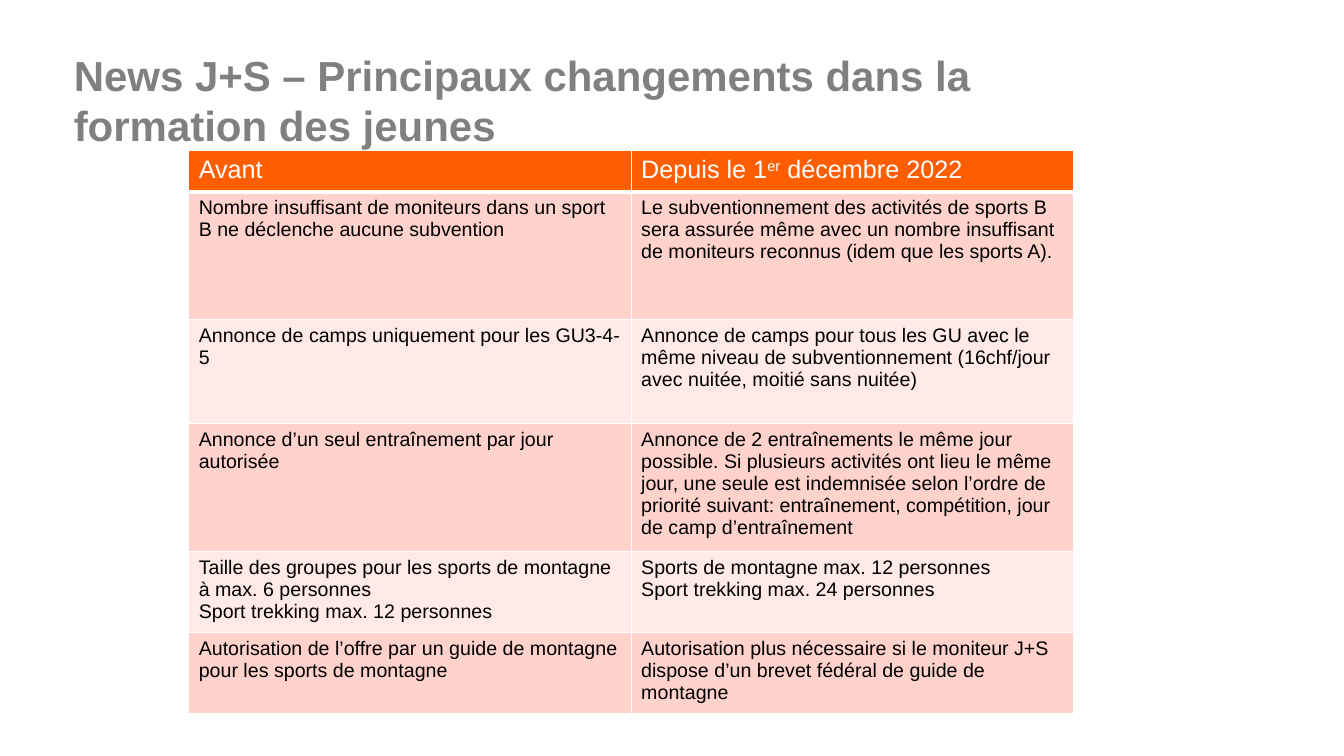
import pptx
import pptx.dml.color
import pptx.oxml.ns
import pptx.util
from lxml import etree

Cm, Pt = pptx.util.Cm, pptx.util.Pt
RGBColor = pptx.dml.color.RGBColor

# Content: each cell is a list of paragraphs, each paragraph a list of runs
TITLE = "News J+S – Principaux changements dans la formation des jeunes"
SUPERSCRIPT = "er"
HEADINGS = ([["Avant"]], [["Depuis le 1", SUPERSCRIPT, " décembre 2022"]])
CHANGES = [
    ([["Nombre insuffisant de moniteurs dans un sport B ne déclenche aucune subvention"]],
     [["Le subventionnement des activités de sports B sera assurée même avec un nombre "
       "insuffisant de moniteurs reconnus (idem que les sports A)."]]),
    ([["Annonce de camps uniquement pour les GU3-4-5"]],
     [["Annonce de camps pour tous les GU avec le même niveau de subventionnement "
       "(16chf/jour avec nuitée, moitié sans nuitée)"]]),
    ([["Annonce d’un seul entraînement par jour autorisée"]],
     [["Annonce de 2 entraînements le même jour possible. Si plusieurs activités ont lieu "
       "le même jour, une seule est indemnisée selon l’ordre de priorité suivant: "
       "entraînement, compétition, jour de camp d’entraînement"]]),
    ([["Taille des groupes pour les sports de montagne à max. 6 personnes"],
      ["Sport trekking max. 12 personnes"]],
     [["Sports de montagne max. 12 personnes"],
      ["Sport trekking max. 24 personnes"]]),
    ([["Autorisation de l’offre par un guide de montagne pour les sports de montagne"]],
     [["Autorisation plus nécessaire si le moniteur J+S dispose d’un brevet fédéral "
       "de guide de montagne"]]),
]

# Look
FONT = "Arial"
GREY = RGBColor(0x80, 0x80, 0x80)
WHITE = RGBColor(0xFF, 0xFF, 0xFF)
BLACK = RGBColor(0, 0, 0)
ORANGE = RGBColor(0xFF, 0x5E, 0x00)
BANDS = (RGBColor(0xFF, 0xD2, 0xCC), RGBColor(0xFF, 0xEA, 0xE7))
COLUMN_WIDTH = Cm(11.15)
ROW_HEIGHTS = [Cm(h) for h in (1.03, 3.23, 2.62, 3.03, 1.92, 2.03)]


def add_run(paragraph, text, size, color, bold=False):
    run = paragraph.add_run()
    run.text = text
    run.font.name = FONT
    run.font.size = Pt(size)
    run.font.bold = bold
    run.font.color.rgb = color
    return run


def add_borders(cell, top, bottom):
    properties = cell._tc.get_or_add_tcPr()
    qn = pptx.oxml.ns.qn
    for side, width in (("L", 1), ("R", 1), ("T", top), ("B", bottom)):
        line = etree.SubElement(properties, qn(f"a:ln{side}"), w=str(Pt(width)))
        fill = etree.SubElement(line, qn("a:solidFill"))
        etree.SubElement(fill, qn("a:srgbClr"), val=str(WHITE))


def fill_cell(cell, paragraphs, size, color, background):
    cell.fill.solid()
    cell.fill.fore_color.rgb = background
    cell.margin_left = cell.margin_right = Cm(0.25)
    cell.margin_top = cell.margin_bottom = Cm(0.13)
    frame = cell.text_frame
    for index, runs in enumerate(paragraphs):
        paragraph = frame.add_paragraph() if index else frame.paragraphs[0]
        for text in runs:
            run = add_run(paragraph, text, size, color)
            if text == SUPERSCRIPT:
                run._r.get_or_add_rPr().set("baseline", "30000")


deck = pptx.Presentation()
deck.slide_width, deck.slide_height = Cm(33.87), Cm(19.05)
slide = deck.slides.add_slide(deck.slide_layouts[6])

# Title
title = slide.shapes.add_textbox(Cm(1.86), Cm(1.25), Cm(26.1), Cm(1)).text_frame
title.word_wrap = True
title.margin_left = title.margin_right = title.margin_top = title.margin_bottom = 0
add_run(title.paragraphs[0], TITLE, 30, GREY, bold=True)

# Table of changes
rows = [HEADINGS] + CHANGES
changes = slide.shapes.add_table(len(rows), len(HEADINGS), Cm(4.76), Cm(3.8),
                                 COLUMN_WIDTH * len(HEADINGS), sum(ROW_HEIGHTS)).table
for column in changes.columns:
    column.width = COLUMN_WIDTH
for r, (row, height) in enumerate(zip(rows, ROW_HEIGHTS)):
    changes.rows[r].height = height
    look = (18, WHITE, ORANGE) if r == 0 else (14, BLACK, BANDS[(r - 1) % 2])
    for c, paragraphs in enumerate(row):
        cell = changes.cell(r, c)
        add_borders(cell, top=3 if r == 1 else 1, bottom=3 if r == 0 else 1)
        fill_cell(cell, paragraphs, *look)

deck.save("out.pptx")
